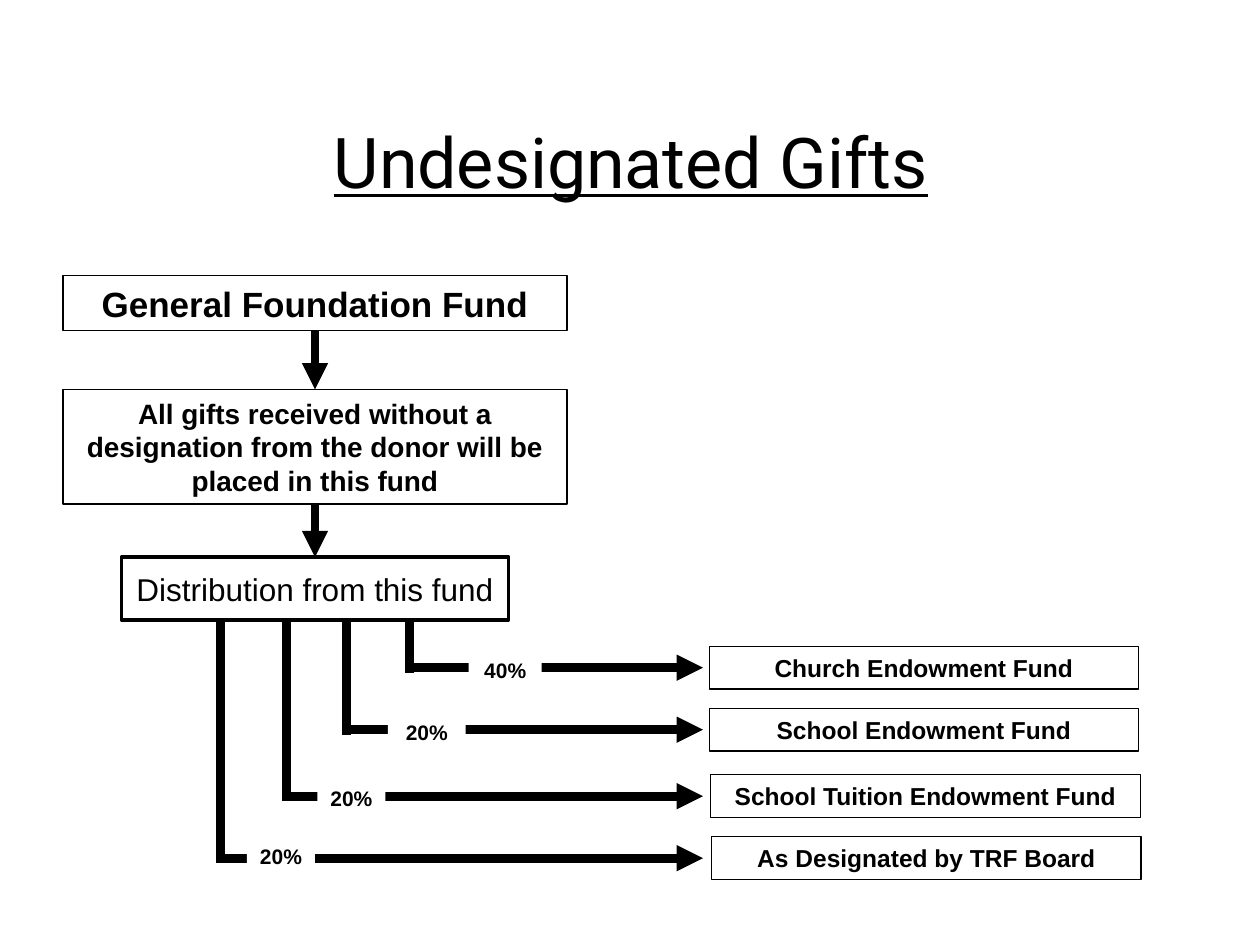
from dataclasses import dataclass

from pptx import Presentation
from pptx.dml.color import RGBColor
from pptx.enum import shapes, text
from pptx.oxml import parse_xml
from pptx.oxml.ns import nsdecls, qn
from pptx.util import Cm, Pt


@dataclass(frozen=True)
class Theme:
    ink: RGBColor = RGBColor(0, 0, 0)
    paper: RGBColor = RGBColor(255, 255, 255)
    title_font: str = "Roboto"
    body_font: str = "Arial"
    title: int = 40
    heading: int = 20
    step: int = 18
    note: int = 16
    fund: int = 14
    share: int = 12
    thin: float = 0.75
    medium: float = 2
    thick: float = 5


THEME = Theme()
TOP, BOTTOM = 0, 2
ARROW_END = 14.17
FUND_SIZE = (10.82 * 0.8, 0.86)
BRANCHES = [
    (8.26, 13.46, "40%", (9.45, 13.13, 1.47), "Church Endowment Fund", 14.3),
    (6.99, 14.71, "20%", (7.82, 14.38, 1.57), "School Endowment Fund", 14.3),
    (5.77, 16.05, "20%", (6.4, 15.7, 1.37), "School Tuition Endowment Fund", 14.33),
    (4.45, 17.3, "20%", (4.98, 16.87, 1.37), "As Designated by TRF Board", 14.35),
]


def write(tf, content, size, font=THEME.body_font, bold=False,
          underline=False, wrap=True):
    tf.word_wrap = wrap
    tf.vertical_anchor = text.MSO_ANCHOR.MIDDLE
    p = tf.paragraphs[0]
    p.alignment = text.PP_ALIGN.CENTER
    r = p.add_run()
    r.text = content
    r.font.name = font
    r.font.size = Pt(size)
    r.font.bold = bold
    r.font.underline = underline
    r.font.color.rgb = THEME.ink


def add_title(s, content):
    sp = s.shapes.title
    sp.left, sp.top, sp.width, sp.height = map(Cm, (6.15, 2.26, 13.13, 1.96))
    write(sp.text_frame, content, THEME.title, font=THEME.title_font, underline=True)


def add_box(s, content, box, size, line=None, filled=False, **style):
    sp = s.shapes.add_shape(shapes.MSO_SHAPE.RECTANGLE, *map(Cm, box))
    sp.shadow.inherit = False
    if filled:
        sp.fill.solid()
        sp.fill.fore_color.rgb = THEME.paper
    else:
        sp.fill.background()
    if line:
        sp.line.color.rgb = THEME.ink
        sp.line.width = Pt(line)
    else:
        sp.line.fill.background()
    write(sp.text_frame, content, size, **style)
    return sp


def add_line(s, start=(0, 0), end=(0, 0), arrow=False):
    c = s.shapes.add_connector(shapes.MSO_CONNECTOR.STRAIGHT, *map(Cm, start + end))
    c.line.color.rgb = THEME.ink
    c.line.width = Pt(THEME.thick)
    if arrow:
        c.line._get_or_add_ln().append(
            parse_xml(f'<a:tailEnd {nsdecls("a")} type="triangle"/>'))
    c._element.find(qn("p:spPr")).append(
        parse_xml(f'<a:effectLst {nsdecls("a")}/>'))
    return c


def join_down(s, upper, lower):
    c = add_line(s, arrow=True)
    c.begin_connect(upper, BOTTOM)
    c.end_connect(lower, TOP)


def add_branch(s, x, y, share, share_box, fund, fund_left):
    add_line(s, (x, 12.3), (x, y + 0.1))
    add_line(s, (x, y), (ARROW_END, y), arrow=True)
    add_box(s, share, (*share_box, 0.76), THEME.share, filled=True,
            bold=True, wrap=False)
    width, height = FUND_SIZE
    add_box(s, fund, (fund_left, y - height / 2, width, height), THEME.fund,
            line=THEME.thin, bold=True)


def main():
    prs = Presentation()
    prs.slide_width, prs.slide_height = Cm(25.4), Cm(19.05)
    s = prs.slides.add_slide(prs.slide_layouts[5])
    add_title(s, "Undesignated Gifts")
    for branch in BRANCHES:
        add_branch(s, *branch)
    general = add_box(s, "General Foundation Fund", (1.27, 5.56, 10.16, 1.11),
                      THEME.heading, line=THEME.thin, bold=True)
    gifts = add_box(s, "All gifts received without a designation from the donor "
                    "will be placed in this fund", (1.27, 7.85, 10.16, 2.31),
                    THEME.note, line=THEME.thin, bold=True)
    distribution = add_box(s, "Distribution from this fund", (2.45, 11.23, 7.8, 1.27),
                           THEME.step, line=THEME.medium, filled=True, wrap=False)
    join_down(s, general, gifts)
    join_down(s, gifts, distribution)
    prs.save("out.pptx")


if __name__ == "__main__":
    main()
